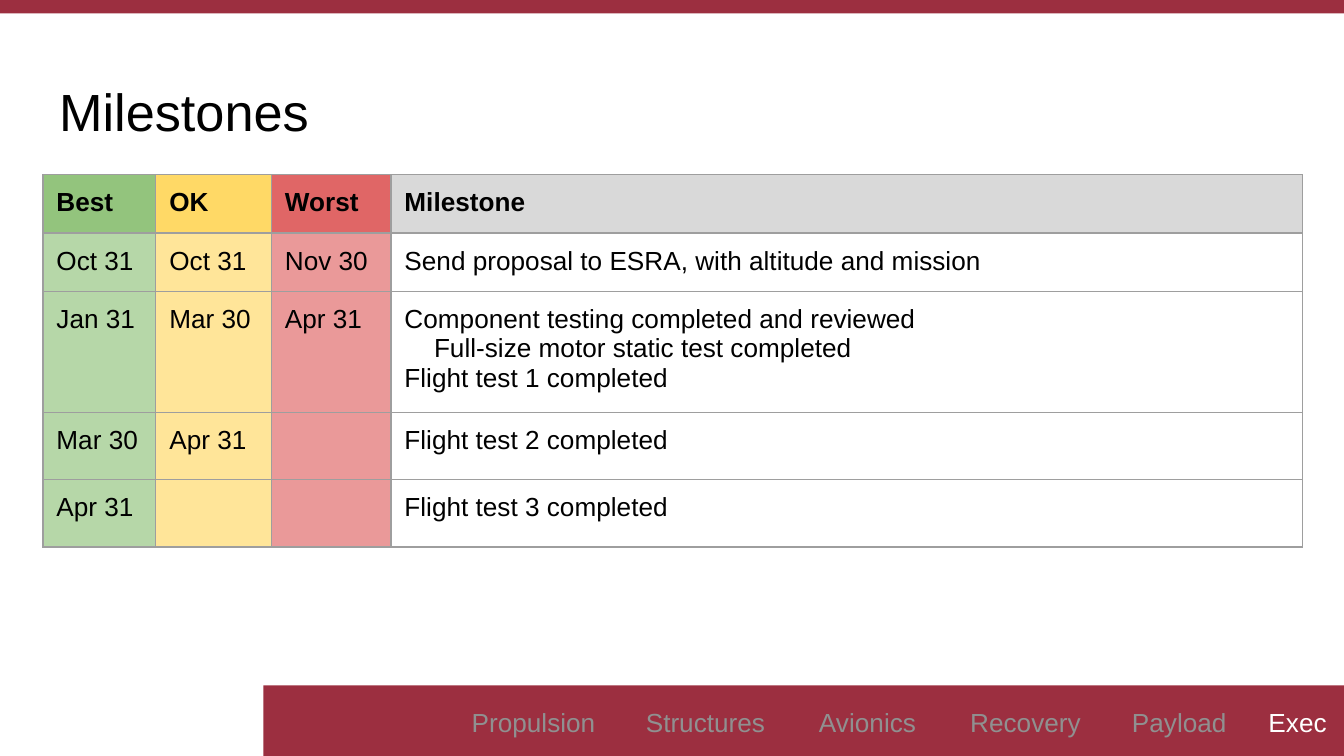
import pptx
import pptx.util
import pptx.dml.color
import pptx.enum.shapes
import pptx.enum.text
import pptx.oxml
import pptx.oxml.ns
from pptx.util import Inches

RGBColor = pptx.dml.color.RGBColor
MAROON = RGBColor(0x9C, 0x2F, 0x40)
BLACK = RGBColor(0x00, 0x00, 0x00)
WHITE = RGBColor(0xFF, 0xFF, 0xFF)
GRAY = RGBColor(0x90, 0x90, 0x90)
BORDER = RGBColor(0x9E, 0x9E, 0x9E)
HEADER_FILLS = [RGBColor(0x93, 0xC4, 0x7D), RGBColor(0xFF, 0xD9, 0x66),
                RGBColor(0xE0, 0x66, 0x66), RGBColor(0xD9, 0xD9, 0xD9)]
BODY_FILLS = [RGBColor(0xB6, 0xD7, 0xA8), RGBColor(0xFF, 0xE5, 0x99),
              RGBColor(0xEA, 0x99, 0x99), None]


def format_text(text_frame, size, color, bold=False):
    for paragraph in text_frame.paragraphs:
        for run in paragraph.runs:
            run.font.name = "Arial"
            run.font.size = pptx.util.Pt(size)
            run.font.bold = bold
            run.font.color.rgb = color


def set_borders(cell):
    properties = cell._tc.get_or_add_tcPr()
    for index, side in enumerate(("lnL", "lnR", "lnT", "lnB")):
        line = pptx.oxml.parse_xml(
            f'<a:{side} {pptx.oxml.ns.nsdecls("a")} w="9525"><a:solidFill>'
            f'<a:srgbClr val="{BORDER}"/></a:solidFill></a:{side}>')
        properties.insert(index, line)


# Widescreen 16:9 slide
presentation = pptx.Presentation()
presentation.slide_width = Inches(10)
presentation.slide_height = Inches(10) * 9 // 16
slide = presentation.slides.add_slide(presentation.slide_layouts[5])

# Bottom and top bars
for left, top, width, height in [(1.96, 5.1, 8.04, 0.53), (0, 0, 10, 0.1)]:
    bar = slide.shapes.add_shape(
        pptx.enum.shapes.MSO_SHAPE.RECTANGLE,
        Inches(left), Inches(top), Inches(width), Inches(height))
    bar.shadow.inherit = False
    bar.fill.solid()
    bar.fill.fore_color.rgb = MAROON
    bar.line.fill.background()

# Title
title = slide.shapes.title
title.left, title.top = Inches(0.34), Inches(0.49)
title.width, title.height = Inches(9.32), Inches(0.63)
frame = title.text_frame
frame.text = "Milestones"
frame.vertical_anchor = pptx.enum.text.MSO_ANCHOR.TOP
frame.margin_left = frame.margin_right = Inches(0.1)
frame.margin_top = frame.margin_bottom = Inches(0.1)
frame.paragraphs[0].alignment = pptx.enum.text.PP_ALIGN.LEFT
format_text(frame, 28, BLACK)

# Section navigation, current section in white
sections = [("Propulsion", 1.28), ("Structures", 1.28), ("Avionics", 1.13),
            ("Recovery", 1.22), ("Payload", 1.07), ("Exec", 0.69)]
left = 3.33
for name, width in sections:
    label = slide.shapes.add_textbox(
        Inches(left), Inches(5.11), Inches(width), Inches(0.52))
    frame = label.text_frame
    frame.word_wrap = True
    frame.text = name
    frame.vertical_anchor = pptx.enum.text.MSO_ANCHOR.MIDDLE
    frame.margin_left = frame.margin_right = Inches(0.1)
    frame.margin_top = frame.margin_bottom = Inches(0.1)
    frame.paragraphs[0].alignment = pptx.enum.text.PP_ALIGN.CENTER
    format_text(frame, 14, WHITE if name == "Exec" else GRAY)
    left += width

# Milestone table, rows grow to fit their text
rows = [
    ["Best", "OK", "Worst", "Milestone"],
    ["Oct 31", "Oct 31", "Nov 30", "Send proposal to ESRA, with altitude and mission"],
    ["Jan 31", "Mar 30", "Apr 31",
     "Component testing completed and reviewed\n"
     "Full-size motor static test completed\n"
     "Flight test 1 completed"],
    ["Mar 30", "Apr 31", "", "Flight test 2 completed"],
    ["Apr 31", "", "", "Flight test 3 completed"],
]
column_widths = [0.84, 0.86, 0.89, 6.78]
row_heights = [0.27, 0.27, 0.48, 0.25, 0.39]
table = slide.shapes.add_table(
    len(rows), len(column_widths), Inches(0.32), Inches(1.3),
    Inches(sum(column_widths)), Inches(sum(row_heights))).table
table.horz_banding = False
for column, width in zip(table.columns, column_widths):
    column.width = Inches(width)
for row, height in zip(table.rows, row_heights):
    row.height = Inches(height)

for row_index, texts in enumerate(rows):
    is_header = row_index == 0
    fills = HEADER_FILLS if is_header else BODY_FILLS
    for column_index, (text, fill) in enumerate(zip(texts, fills)):
        cell = table.cell(row_index, column_index)
        cell.text_frame.text = text
        cell.margin_left = cell.margin_right = Inches(0.1)
        cell.margin_top = cell.margin_bottom = Inches(0.1)
        format_text(cell.text_frame, 14, BLACK, is_header)
        if fill is None:
            cell.fill.background()
        else:
            cell.fill.solid()
            cell.fill.fore_color.rgb = fill
        set_borders(cell)

# Indent the sub-item of the component testing milestone
sub_item = table.cell(2, 3).text_frame.paragraphs[1]
sub_item._p.get_or_add_pPr().set("marL", str(Inches(0.22)))

presentation.save("out.pptx")
